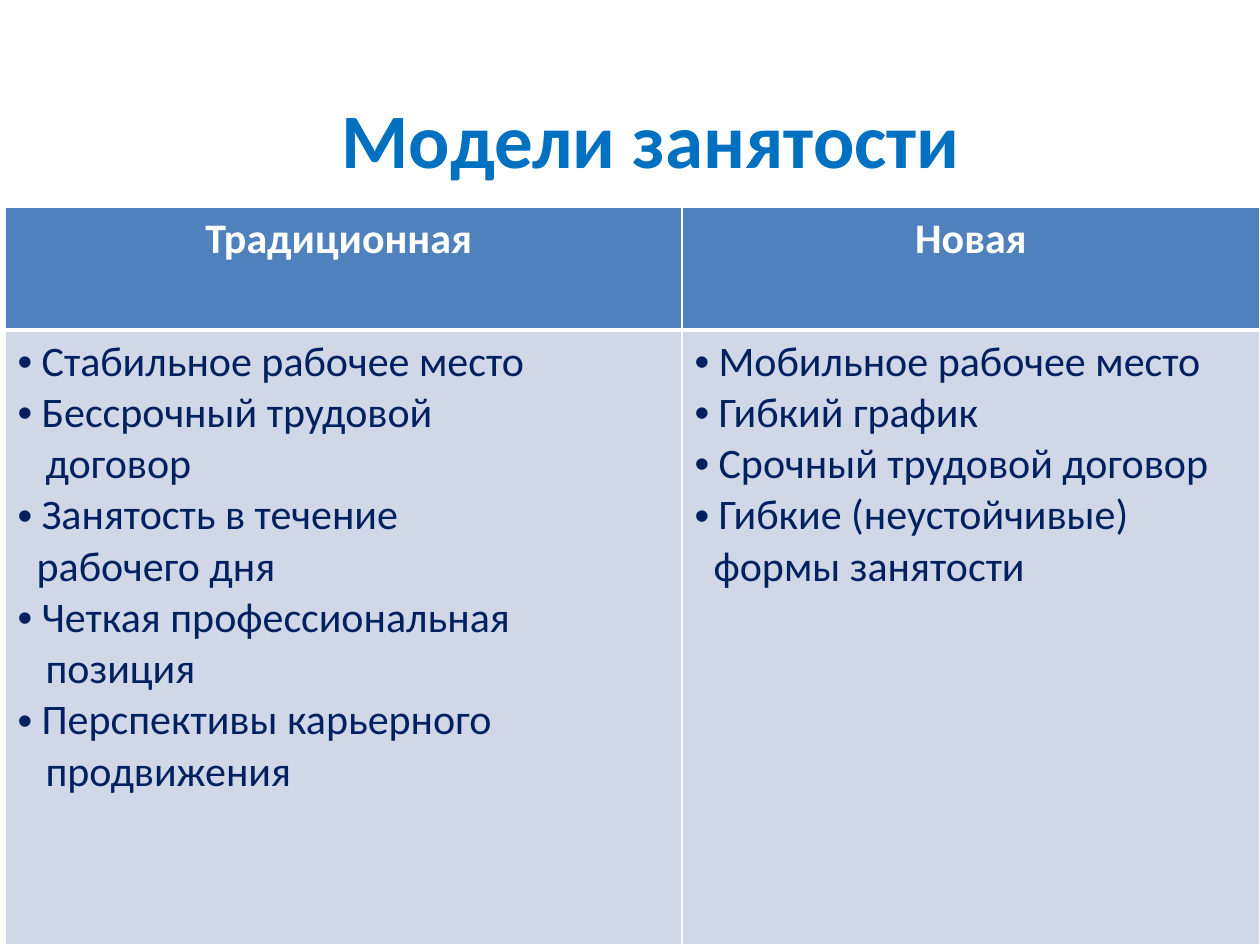
from dataclasses import dataclass

from lxml.etree import SubElement
from pptx import Presentation
from pptx.dml.color import RGBColor as RGB
from pptx.enum.text import MSO_ANCHOR as ANCHOR, PP_ALIGN as ALIGN
from pptx.oxml import parse_xml
from pptx.oxml.ns import nsdecls, qn
from pptx.util import Pt

EMU_PER_PX = 914400 / 126


@dataclass(frozen=True)
class Theme:
    font: str = "Calibri"
    title: str = "0070C0"
    head_fill: str = "4F81BD"
    head_text: str = "FFFFFF"
    body_fill: str = "D0D8E8"
    body_text: str = "002060"
    border: str = "FFFFFF"
    title_size: int = 44
    text_size: int = 24


theme = Theme()


def px(n):
    return round(n * EMU_PER_PX)


def add_run(p, text, size, color, bold):
    r = p.add_run()
    r.text = text
    r.font.name = theme.font
    r.font.size = Pt(size)
    r.font.bold = bold
    r.font.color.rgb = RGB.from_string(color)


prs = Presentation()
prs.slide_width, prs.slide_height = px(1260), px(945)
s = prs.slides.add_slide(prs.slide_layouts[5])

# Title
title = s.shapes.title
title.left, title.top, title.width, title.height = px(84), px(59), px(1134), px(158)
tf = title.text_frame
tf.word_wrap = True
tf.vertical_anchor = ANCHOR.MIDDLE
p = tf.paragraphs[0]
p.alignment = ALIGN.CENTER
add_run(p, "Модели занятости", theme.title_size, theme.title, True)

# Employment models: heading and (line, indent, bulleted) for each column
BULLET, NEAR, FAR = (24, True), (19, False), (28, False)
models = [
    ("Традиционная ", [
        ("Стабильное рабочее место", BULLET),
        ("Бессрочный трудовой", BULLET),
        ("договор", FAR),
        ("Занятость в течение", BULLET),
        ("рабочего дня", NEAR),
        ("Четкая профессиональная", BULLET),
        ("позиция", FAR),
        ("Перспективы карьерного", BULLET),
        ("продвижения", FAR),
    ]),
    ("Новая", [
        ("Мобильное рабочее место", BULLET),
        ("Гибкий график", BULLET),
        ("Срочный трудовой договор", BULLET),
        ("Гибкие (неустойчивые)", BULLET),
        ("формы занятости", NEAR),
    ]),
]

# Table grid
table = s.shapes.add_table(2, 2, px(5), px(207), px(1255), px(738)).table
for col, width in zip(table.columns, (677, 578)):
    col.width = px(width)
for row, height in zip(table.rows, (123, 615)):
    row.height = px(height)

# Table text
for col, (heading, lines) in enumerate(models):
    p = table.cell(0, col).text_frame.paragraphs[0]
    p.alignment = ALIGN.CENTER
    add_run(p, heading, theme.text_size, theme.head_text, True)

    tf = table.cell(1, col).text_frame
    for i, (line, (indent, bulleted)) in enumerate(lines):
        p = tf.add_paragraph() if i else tf.paragraphs[0]
        pPr = p._p.get_or_add_pPr()
        pPr.set("marL", str(px(indent)))
        pPr.set("indent", str(-px(indent) if bulleted else 0))
        if bulleted:
            SubElement(pPr, qn("a:buFont")).set("typeface", "Arial")
            SubElement(pPr, qn("a:buChar")).set("char", "•")
        add_run(p, line, theme.text_size, theme.body_text, False)

# Cell fills and borders, with a heavy rule under the heading row
for row, fill in enumerate((theme.head_fill, theme.body_fill)):
    widths = {"lnL": 1, "lnR": 1, "lnT": 1 if row == 0 else 3, "lnB": 3 if row == 0 else 1}
    for col in range(2):
        cell = table.cell(row, col)
        cell.fill.solid()
        cell.fill.fore_color.rgb = RGB.from_string(fill)
        tcPr = cell._tc.get_or_add_tcPr()
        for i, (tag, width) in enumerate(widths.items()):
            tcPr.insert(i, parse_xml(
                f'<a:{tag} {nsdecls("a")} w="{Pt(width)}"><a:solidFill>'
                f'<a:srgbClr val="{theme.border}"/></a:solidFill></a:{tag}>'))

prs.save("out.pptx")
